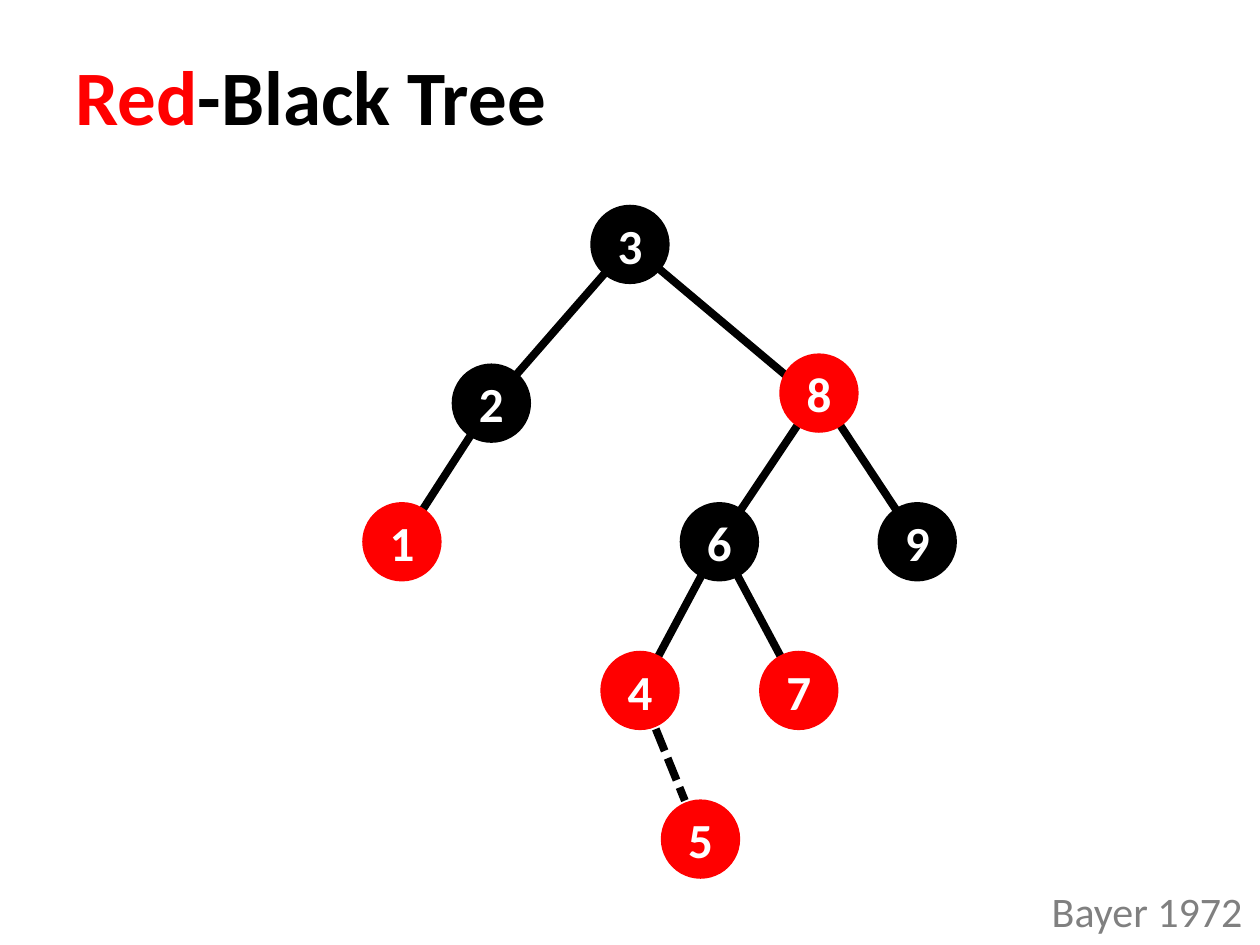
import math

import pptx
import pptx.dml.color
import pptx.enum.dml
import pptx.enum.shapes
import pptx.enum.text
import pptx.oxml
import pptx.oxml.ns
import pptx.util

Inches = pptx.util.Inches
Pt = pptx.util.Pt
ANCHOR = pptx.enum.text.MSO_ANCHOR
ALIGN = pptx.enum.text.PP_ALIGN

COLORS = {"red": "FF0000", "black": "000000", "white": "FFFFFF", "gray": "808080"}
COLORS = {name: pptx.dml.color.RGBColor.from_string(value) for name, value in COLORS.items()}
DIAMETER = 0.63
ROOT = 3
ROOT_CHILD_JOINT = 3.2
TRIM = 0.33

# key: (centre x, centre y, colour)
nodes = {
    3: (5, 1.94, "black"),
    2: (3.9, 3.2, "black"),
    8: (6.5, 3.12, "red"),
    1: (3.19, 4.3, "red"),
    6: (5.71, 4.3, "black"),
    9: (7.28, 4.3, "black"),
    4: (5.08, 5.48, "red"),
    7: (6.34, 5.48, "red"),
    5: (5.56, 6.66, "red"),
}
edges = [(3, 2), (3, 8), (2, 1), (8, 6), (8, 9), (6, 4), (6, 7)]
inserted_edge = (4, 5)

deck = pptx.Presentation()
deck.slide_width = Inches(10)
deck.slide_height = Inches(7.5)
page = deck.slides.add_slide(deck.slide_layouts[6])


def add_edge(x1, y1, x2, y2):
    line = page.shapes.add_connector(
        pptx.enum.shapes.MSO_CONNECTOR.STRAIGHT,
        Inches(x1), Inches(y1), Inches(x2), Inches(y2))
    line.line.color.rgb = COLORS["black"]
    line.line.width = Pt(4.5)
    properties = line._element.find(pptx.oxml.ns.qn("p:spPr"))
    properties.append(pptx.oxml.parse_xml(
        '<a:effectLst xmlns:a="http://schemas.openxmlformats.org/drawingml/2006/main"/>'))
    return line


def write(shape, spans, size, bold, align, anchor):
    """Fill a shape with one paragraph of (text, colour) spans."""
    frame = shape.text_frame
    frame.word_wrap = True
    frame.vertical_anchor = anchor
    para = frame.paragraphs[0]
    para.alignment = align
    para.font.name = "Calibri"
    para.font.size = Pt(size)
    para.font.bold = bold
    for text, color in spans:
        span = para.add_run()
        span.text = text
        span.font.color.rgb = COLORS[color]


# Edges lie behind the nodes and run between centres
for parent, child in edges:
    x1, y1, _ = nodes[parent]
    x2, y2, _ = nodes[child]
    add_edge(x1, y1, x2, ROOT_CHILD_JOINT if parent == ROOT else y2)

# The inserted edge is dashed and stops at the rims of its nodes
x1, y1, _ = nodes[inserted_edge[0]]
x2, y2, _ = nodes[inserted_edge[1]]
length = math.hypot(x2 - x1, y2 - y1)
dx, dy = TRIM * (x2 - x1) / length, TRIM * (y2 - y1) / length
dashed = add_edge(x1 + dx, y1 + dy, x2 - dx, y2 - dy)
dashed.line.dash_style = pptx.enum.dml.MSO_LINE.SQUARE_DOT

title = page.shapes.add_textbox(Inches(0.5), Inches(0.13), Inches(9), Inches(1.25))
write(title, [("Red", "red"), ("-Black Tree", "black")], 44, True, ALIGN.LEFT, ANCHOR.MIDDLE)

for key, (x, y, color) in nodes.items():
    node = page.shapes.add_shape(
        pptx.enum.shapes.MSO_SHAPE.OVAL,
        Inches(x - DIAMETER / 2), Inches(y - DIAMETER / 2), Inches(DIAMETER), Inches(DIAMETER))
    node.shadow.inherit = False
    node.fill.solid()
    node.fill.fore_color.rgb = COLORS[color]
    node.line.fill.background()
    write(node, [(str(key), "white")], 28, True, ALIGN.CENTER, ANCHOR.MIDDLE)

credit = page.shapes.add_textbox(Inches(7.05), Inches(6.98), Inches(2.91), Inches(0.5))
write(credit, [("Bayer 1972", "gray")], 24, False, ALIGN.RIGHT, ANCHOR.TOP)

deck.save("out.pptx")
